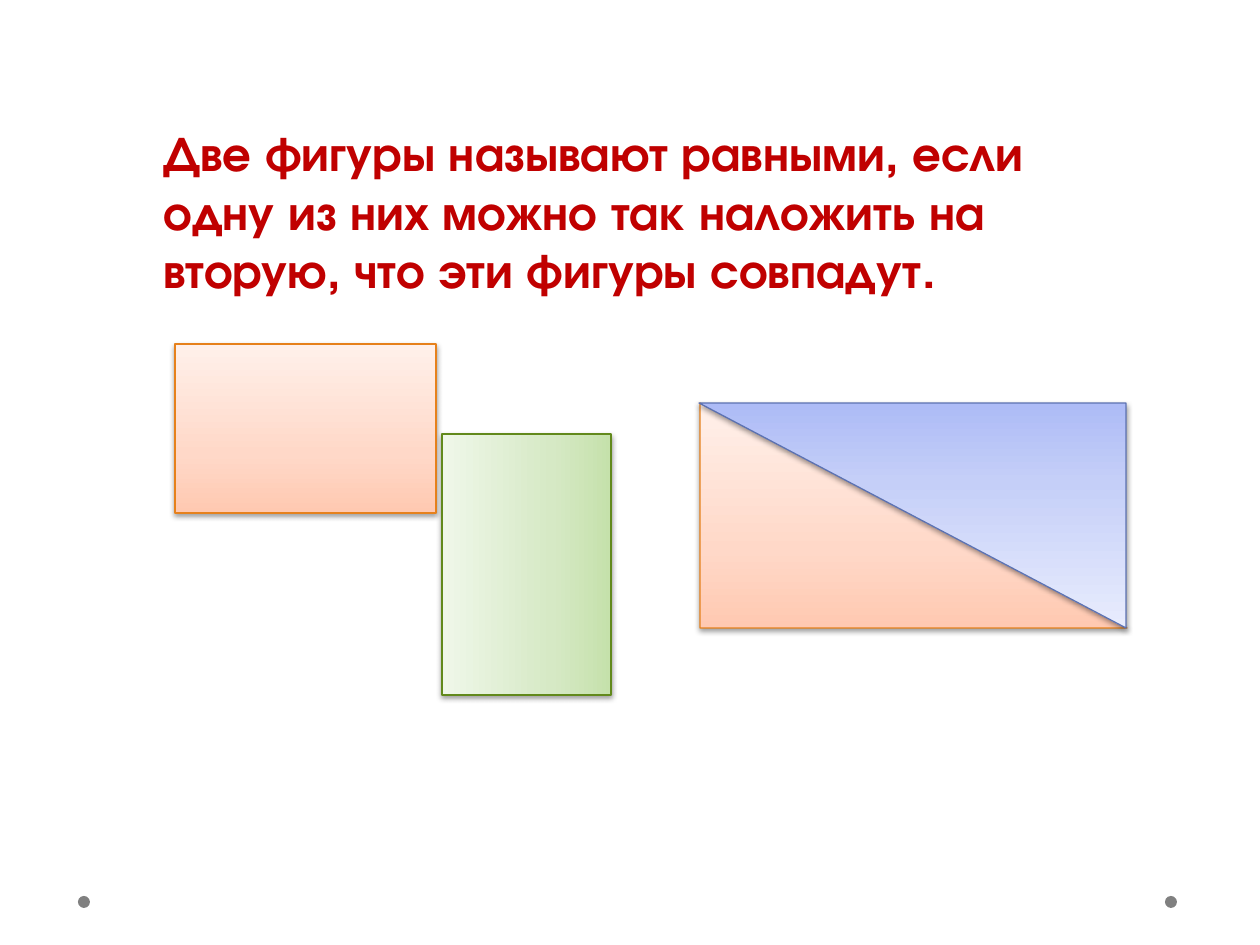
import copy

import lxml.etree
import pptx
import pptx.dml.color
import pptx.enum.shapes
import pptx.oxml.ns
import pptx.util

RGB = pptx.dml.color.RGBColor
SHAPE = pptx.enum.shapes.MSO_SHAPE
qn = pptx.oxml.ns.qn

PX = 914400 / 126
FONT = "TeX Gyre Adventor"
RED = RGB(0xC0, 0x00, 0x00)
GRAY = RGB(0x80, 0x80, 0x80)
ORANGE_LINE = RGB(0xE6, 0x81, 0x1C)
GREEN_LINE = RGB(0x62, 0x89, 0x1C)
BLUE_LINE = RGB(0x5C, 0x72, 0xB2)
ORANGE = [RGB(0xFF, 0xC9, 0xB1), RGB(0xFF, 0xD8, 0xC8), RGB(0xFF, 0xF0, 0xEA)]
GREEN = [RGB(0xC5, 0xE1, 0xAB), RGB(0xD6, 0xE9, 0xC5), RGB(0xEF, 0xF7, 0xE9)]
BLUE = [RGB(0xAD, 0xBB, 0xF6), RGB(0xC5, 0xCF, 0xF8), RGB(0xE8, 0xEC, 0xFD)]
STOPS = [0, 0.35, 1]

DEFINITION = ("Две фигуры называют равными, если одну из них можно так "
              "наложить на вторую, что эти фигуры совпадут.")
DOTS = [(1165, 896, 12, 12), (78, 896, 12, 12)]
RECTANGLE, TRIANGLE = (261, 169), (427, 225)
FIGURES = [
    (SHAPE.RECTANGLE, (175, 344), RECTANGLE, 0, ORANGE, ORANGE_LINE),
    (SHAPE.RECTANGLE, (396, 480), RECTANGLE, 270, GREEN, GREEN_LINE),
    (SHAPE.RIGHT_TRIANGLE, (700, 403), TRIANGLE, 0, ORANGE, ORANGE_LINE),
    (SHAPE.RIGHT_TRIANGLE, (699, 403), TRIANGLE, 180, BLUE, BLUE_LINE),
]


def emu(*lengths):
    return [round(n * PX) for n in lengths]


def set_gradient(s, colors):
    s.fill.gradient()
    s.fill.gradient_angle = 90
    stops = s.fill.gradient_stops
    gs_list = s._element.spPr.find(".//" + qn("a:gsLst"))
    gs_list.insert(1, copy.deepcopy(gs_list[0]))
    for stop, position, color in zip(stops, STOPS, colors):
        stop.position = position
        stop.color.rgb = color


def add_shadow(s):
    s.shadow.inherit = False
    effects = s._element.spPr.find(qn("a:effectLst"))
    shadow = lxml.etree.SubElement(
        effects, qn("a:outerShdw"), blurRad="40000", dist="20000",
        dir="5400000", rotWithShape="0")
    color = lxml.etree.SubElement(shadow, qn("a:srgbClr"), val="000000")
    lxml.etree.SubElement(color, qn("a:alpha"), val="38000")


def add_dot(slide, box):
    s = slide.shapes.add_shape(SHAPE.OVAL, *emu(*box))
    s.shadow.inherit = False
    s.fill.solid()
    s.fill.fore_color.rgb = GRAY
    s.line.fill.background()


def add_definition(slide):
    tf = slide.shapes.add_textbox(*emu(151, 116, 992, 159)).text_frame
    tf.word_wrap = True
    p = tf.paragraphs[0]
    p.text = DEFINITION
    p.font.name = FONT
    p.font.size = pptx.util.Pt(28)
    p.font.bold = True
    p.font.color.rgb = RED


def add_figure(slide, kind, corner, size, rotation, colors, outline):
    s = slide.shapes.add_shape(kind, *emu(*corner, *size))
    s.rotation = rotation
    set_gradient(s, colors)
    s.line.color.rgb = outline
    s.line.width = pptx.util.Pt(0.75)
    add_shadow(s)


def main():
    """Build the slide that defines equal figures."""
    prs = pptx.Presentation()
    prs.slide_width, prs.slide_height = emu(1260, 945)
    slide = prs.slides.add_slide(prs.slide_layouts[6])
    for box in DOTS:
        add_dot(slide, box)
    add_definition(slide)
    for figure in FIGURES:
        add_figure(slide, *figure)
    prs.save("out.pptx")


if __name__ == "__main__":
    main()
